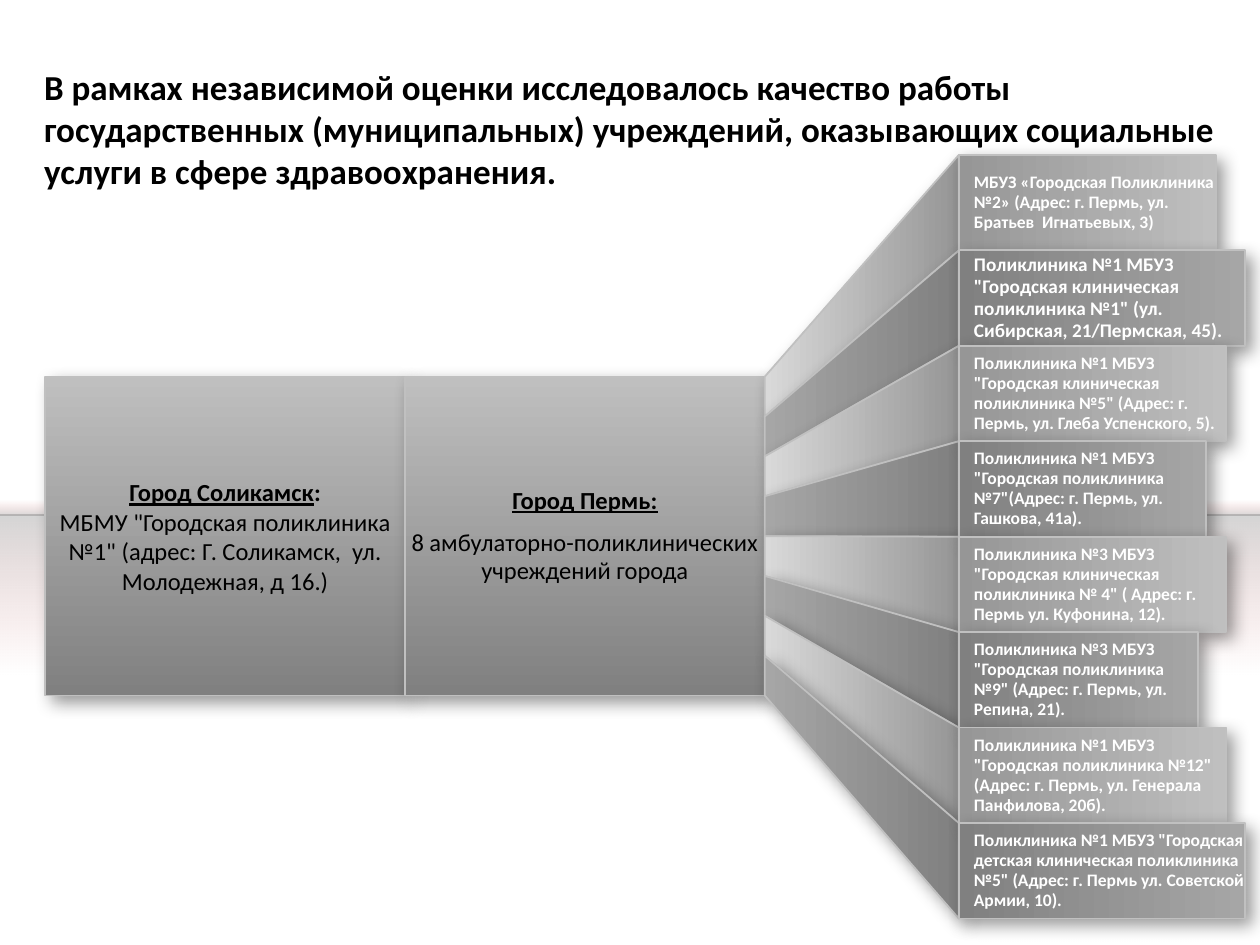
import pptx
import pptx.util
import pptx.dml.color
import pptx.enum.shapes
import pptx.enum.text
import pptx.oxml
import pptx.oxml.ns

Inch = pptx.util.Inches
Pt = pptx.util.Pt
Align = pptx.enum.text.PP_ALIGN
RECT = pptx.enum.shapes.MSO_SHAPE.RECTANGLE
NS = pptx.oxml.ns.nsdecls("a")
HUES = {
    "ink": "000000", "white": "FFFFFF", "edge": "C0C0C0", "red": "C00000",
    "coal": "262626", "pale": "D9D9D9", "light": "BFBFBF", "soft": "A6A6A6",
    "mid": "969696", "dark": "808080",
}

deck = pptx.Presentation()
deck.slide_width, deck.slide_height = Inch(10), Inch(7.5)
slide = deck.slides.add_slide(deck.slide_layouts[6])
shapes = slide.shapes


def paint(shape, stops, angle, edged=True):
    """Fill with a gradient of (hue, alpha) stops; edged adds line and shadow."""
    marks = "".join(
        f'<a:gs pos="{pos}"><a:srgbClr val="{HUES[hue]}">'
        f'<a:alpha val="{alpha * 1000}"/></a:srgbClr></a:gs>'
        for pos, (hue, alpha) in zip((0, 100000), stops))
    shape.fill.background()
    blank = shape._element.spPr.find(pptx.oxml.ns.qn("a:noFill"))
    blank.getparent().replace(blank, pptx.oxml.parse_xml(
        f'<a:gradFill {NS} rotWithShape="1"><a:gsLst>{marks}</a:gsLst>'
        f'<a:lin ang="{angle * 60000}" scaled="0"/></a:gradFill>'))
    shape.shadow.inherit = False
    if not edged:
        shape.line.fill.background()
        return
    shape.line.color.rgb = pptx.dml.color.RGBColor.from_string(HUES["edge"])
    shape.line.width = Pt(1)
    glow = shape._element.spPr.find(pptx.oxml.ns.qn("a:effectLst"))
    glow.append(pptx.oxml.parse_xml(
        f'<a:outerShdw {NS} blurRad="{Pt(10)}" dist="{Pt(5)}" dir="2700000" '
        f'algn="tl" rotWithShape="0"><a:srgbClr val="{HUES["ink"]}">'
        f'<a:alpha val="40000"/></a:srgbClr></a:outerShdw>'))


def write(shape, paras, hue, size, form, inset=0):
    """Each paragraph is a list of (text, bold, underline) runs."""
    frame = shape.text_frame
    look = {"word_wrap": True, "margin_left": Inch(inset), "margin_right": 0,
            "margin_top": 0, "margin_bottom": 0,
            "vertical_anchor": pptx.enum.text.MSO_ANCHOR.MIDDLE}
    for key, value in look.items():
        setattr(frame, key, value)
    for num, runs in enumerate(paras):
        para = frame.add_paragraph() if num else frame.paragraphs[0]
        for key, value in form.items():
            setattr(para, key, value)
        for text, bold, under in runs:
            run = para.add_run()
            run.text = text
            style = {"name": "Calibri", "size": Pt(size),
                     "bold": bold, "underline": under}
            for key, value in style.items():
                setattr(run.font, key, value)
            run.font.color.rgb = pptx.dml.color.RGBColor.from_string(HUES[hue])


# Horizon bands behind everything
for top, high, angle in ((3.97, 0.12, 270), (4.08, 1.28, 90)):
    band = shapes.add_shape(RECT, 0, Inch(top), deck.slide_width, Inch(high))
    paint(band, (("coal", 20), ("red", 0)), angle, edged=False)

# Title
title = shapes.add_textbox(Inch(0.35), Inch(0.26), Inch(9.29), Inch(1.52))
write(title, [[("В рамках независимой оценки исследовалось качество работы "
                "государственных (муниципальных) учреждений, оказывающих "
                "социальные услуги в сфере здравоохранения.", True, False)]],
      "ink", 20, {"alignment": Align.LEFT})

# City blocks
LEFT, WIDE = 0.36, 2.855
ROOT, DEEP = 2.99, 2.53
mid = {"alignment": Align.CENTER}
loose = {"line_spacing": 0.95, "space_after": Pt(8)}
towns = [
    ([[("Город Соликамск", True, True), (":", True, False)],
      [('МБМУ "Городская поликлиника №1" (адрес: Г. Соликамск,  ул. '
        'Молодежная, д 16.)', False, False)]], mid),
    ([[("Город Пермь:", True, True)],
      [("8 амбулаторно-поликлинических учреждений города", False, False)]],
     {**mid, **loose}),
]
for col, (paras, form) in enumerate(towns):
    block = shapes.add_shape(RECT, Inch(LEFT + col * WIDE), Inch(ROOT),
                             Inch(WIDE), Inch(DEEP))
    paint(block, (("light", 100), ("dark", 100)), 90)
    write(block, paras, "ink", 14, form)

# Clinics: card width, text size, text
cards = [
    (2.04, 10, 'МБУЗ «Городская Поликлиника №2» (Адрес: г. Пермь, ул. Братьев  Игнатьевых, 3)'),
    (2.27, 11, 'Поликлиника №1 МБУЗ "Городская клиническая поликлиника №1" (ул. Сибирская, 21/Пермская, 45).'),
    (2.12, 10, 'Поликлиника №1 МБУЗ "Городская клиническая поликлиника №5" (Адрес: г. Пермь, ул. Глеба Успенского, 5).'),
    (1.96, 10, 'Поликлиника №1 МБУЗ "Городская поликлиника №7"(Адрес: г. Пермь, ул. Гашкова, 41а).'),
    (2.12, 10, 'Поликлиника №3 МБУЗ "Городская клиническая поликлиника № 4" ( Адрес: г. Пермь ул. Куфонина, 12).'),
    (1.9, 10, 'Поликлиника №3 МБУЗ "Городская поликлиника №9" (Адрес: г. Пермь, ул. Репина, 21).'),
    (2.12, 10, 'Поликлиника №1 МБУЗ "Городская поликлиника №12" (Адрес: г. Пермь, ул. Генерала Панфилова, 20б).'),
    (2.27, 10, 'Поликлиника №1 МБУЗ "Городская детская клиническая поликлиника №5" (Адрес: г. Пермь ул. Советской Армии, 10).'),
]
NEAR, FAR = LEFT + 2 * WIDE, 7.61
TOP = 1.23
ROW = (7.29 - TOP) / len(cards)
STEP = DEEP / len(cards)

# Fan of wedges from the city block to the cards
for row in range(len(cards)):
    start, end = ROOT + row * STEP, TOP + row * ROW
    spots = [(NEAR, start), (FAR, end), (FAR, end + ROW), (NEAR, start + STEP)]
    spots = [(Inch(x), Inch(y)) for x, y in spots]
    pen = shapes.build_freeform(*spots[0])
    pen.add_line_segments(spots[1:], close=True)
    wedge = pen.convert_to_shape()
    if row % 2:
        paint(wedge, (("soft", 100), ("dark", 100)), 0)
    else:
        paint(wedge, (("mid", 100), ("pale", 100)), 180)

# Clinic cards
for row, (wide, size, text) in enumerate(cards):
    card = shapes.add_shape(RECT, Inch(FAR), Inch(TOP + row * ROW),
                            Inch(wide), Inch(ROW))
    pair = ("soft", "dark") if row % 2 else ("light", "mid")
    paint(card, [(hue, 100) for hue in pair], 180)
    write(card, [[(text, True, False)]], "white", size,
          {"alignment": Align.LEFT, **loose}, inset=0.12)

deck.save("out.pptx")
